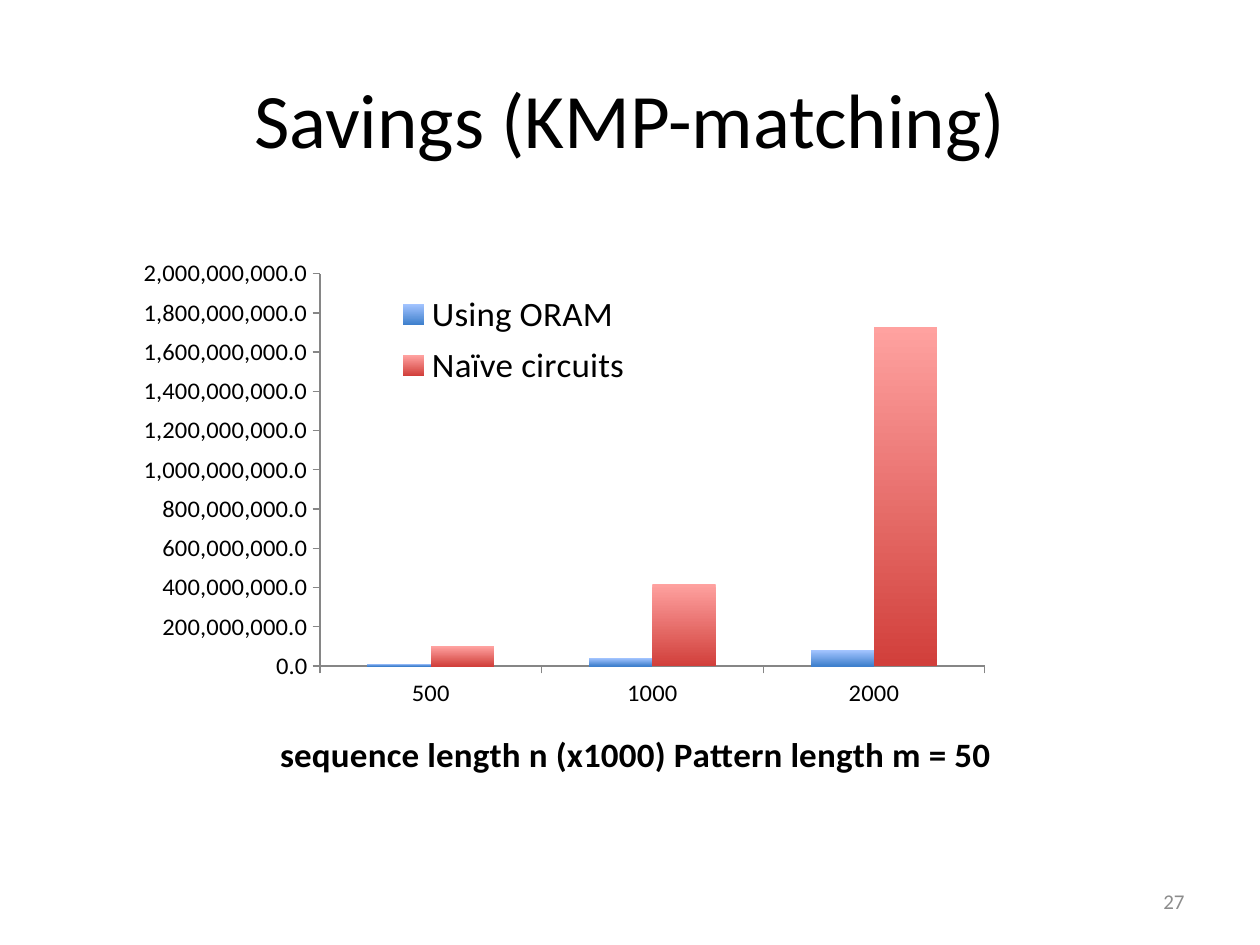
from lxml.etree import SubElement
from pptx import Presentation
from pptx.chart.data import CategoryChartData
from pptx.dml.color import RGBColor
from pptx.enum.chart import XL_CHART_TYPE, XL_LEGEND_POSITION, XL_TICK_MARK
from pptx.enum.text import MSO_ANCHOR, PP_ALIGN
from pptx.oxml.ns import qn
from pptx.util import Inches, Pt

WIDE, HIGH = Inches(10), Inches(7.5)
FACE = "Calibri"
COLORS = {"text": "000000", "number": "8C8C8C", "axis": "868686"}
SIZES = ["500", "1000", "2000"]
# Name, values, top and bottom of the gradient
SERIES = [
    ("Using ORAM", (10e6, 40e6, 80e6), ("A3C4FF", "3F80CD")),
    ("Naïve circuits", (100e6, 420e6, 1730e6), ("FFA2A0", "D13F3B")),
]


def color(name):
    return RGBColor.from_string(COLORS[name])


def share(x, y, w, h):
    """Turn shares of the slide into lengths."""
    return [int(part) for part in (x * WIDE, y * HIGH, w * WIDE, h * HIGH)]


def set_all(target, **values):
    for name, value in values.items():
        setattr(target, name, value)


def style(font, size, ink="text", bold=False):
    set_all(font, name=FACE, size=Pt(size), bold=bold)
    font.color.rgb = color(ink)


def add_text(slide, text, box, size, align, ink="text"):
    frame = slide.shapes.add_textbox(*share(*box)).text_frame
    set_all(frame, word_wrap=True, vertical_anchor=MSO_ANCHOR.MIDDLE)
    para = frame.paragraphs[0]
    set_all(para, text=text, alignment=align)
    style(para.runs[0].font, size, ink)


def place(node, index, **spots):
    """Give a chart part a manual layout in shares of the chart."""
    for old in node.findall(qn("c:layout")):
        node.remove(old)
    layout = SubElement(node, qn("c:layout"))
    node.insert(index, layout)
    manual = SubElement(layout, qn("c:manualLayout"))
    if index == 0:
        SubElement(manual, qn("c:layoutTarget")).set("val", "inner")
    for key in "xy":
        SubElement(manual, qn(f"c:{key}Mode")).set("val", "edge")
    for key, value in spots.items():
        SubElement(manual, qn(f"c:{key}")).set("val", str(value))


def style_axis(axis, code):
    set_all(axis, has_major_gridlines=False, major_tick_mark=XL_TICK_MARK.OUTSIDE,
            minor_tick_mark=XL_TICK_MARK.NONE)
    set_all(axis.tick_labels, number_format=code, number_format_is_linked=False)
    style(axis.tick_labels.font, 14)
    axis.format.line.color.rgb = color("axis")
    axis.format.line.width = Pt(0.75)


def shade(fill, ends):
    fill.gradient()
    fill.gradient_angle = 270
    for stop, ink in zip(fill.gradient_stops, ends):
        stop.color.rgb = RGBColor.from_string(ink)


def add_bars(slide, box):
    data = CategoryChartData(number_format="#,##0.0")
    data.categories = SIZES
    for name, values, _ in SERIES:
        data.add_series(name, values)
    chart = slide.shapes.add_chart(
        XL_CHART_TYPE.COLUMN_CLUSTERED, *share(*box), data).chart
    set_all(chart, has_title=False, has_legend=True)
    style(chart.font, 10)
    plot = chart.plots[0]
    set_all(plot, gap_width=150, overlap=0, vary_by_categories=False)
    for bars, (_, _, ends) in zip(plot.series, SERIES):
        shade(bars.format.fill, ends)

    style_axis(chart.category_axis, "General")
    style_axis(chart.value_axis, "#,##0.0")
    set_all(chart.value_axis, minimum_scale=0, maximum_scale=2e9, major_unit=2e8)
    title = chart.category_axis.axis_title
    para = title.text_frame.paragraphs[0]
    para.text = "sequence length n (x1000) Pattern length m = 50"
    style(para.runs[0].font, 20, bold=True)

    legend = chart.legend
    set_all(legend, position=XL_LEGEND_POSITION.RIGHT, include_in_layout=False)
    style(legend.font, 20)
    area = chart._chartSpace.find(".//" + qn("c:plotArea"))
    place(area, 0, x=0.21, y=0.06, w=0.72, h=0.74)
    place(title._element, 1, x=0.16, y=0.91)
    place(legend._element, 1, x=0.28, y=0.08, w=0.28, h=0.21)


def main():
    deck = Presentation()
    set_all(deck, slide_width=WIDE, slide_height=HIGH)
    slide = deck.slides.add_slide(deck.slide_layouts[6])
    add_text(slide, "Savings (KMP-matching)", (0.05, 0.04, 0.9, 0.17), 44,
             PP_ALIGN.CENTER)
    add_bars(slide, (0.1, 0.256, 0.733, 0.577))
    add_text(slide, "27", (0.717, 0.927, 0.233, 0.053), 12, PP_ALIGN.RIGHT, "number")
    deck.save("out.pptx")


if __name__ == "__main__":
    main()
